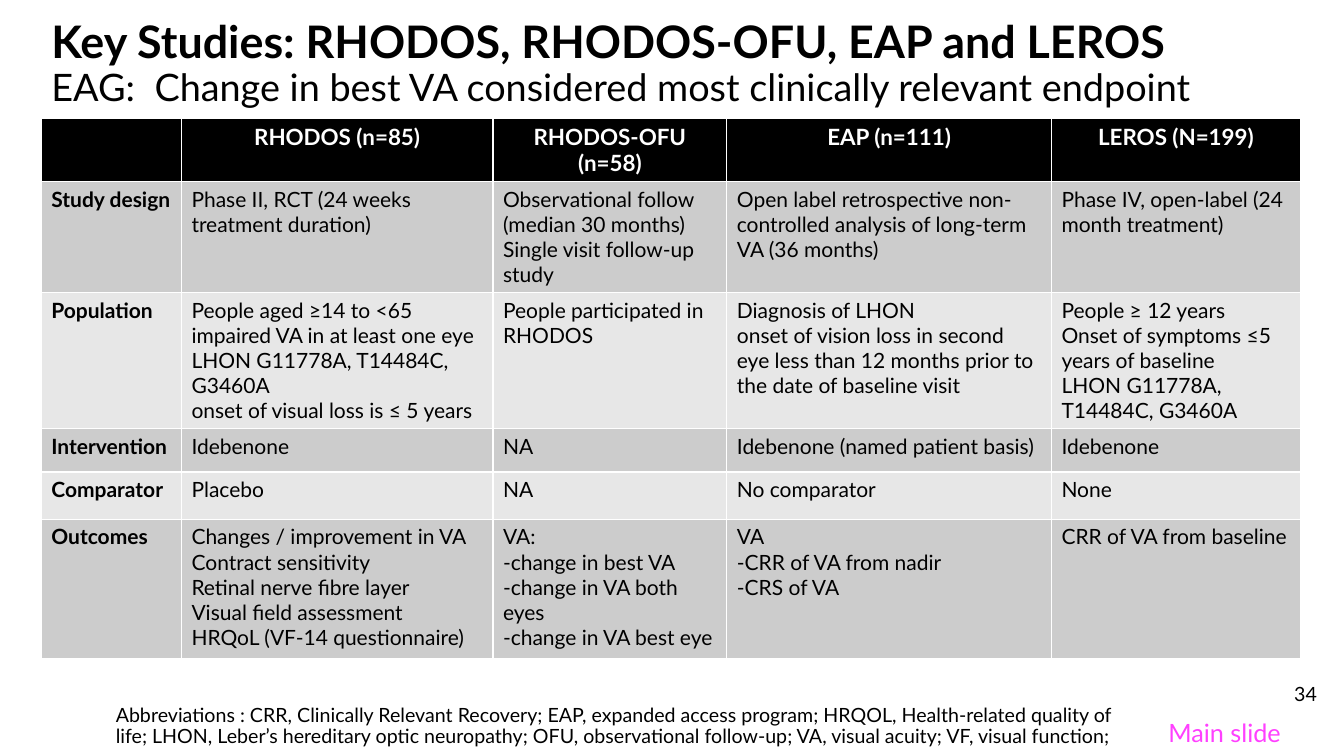
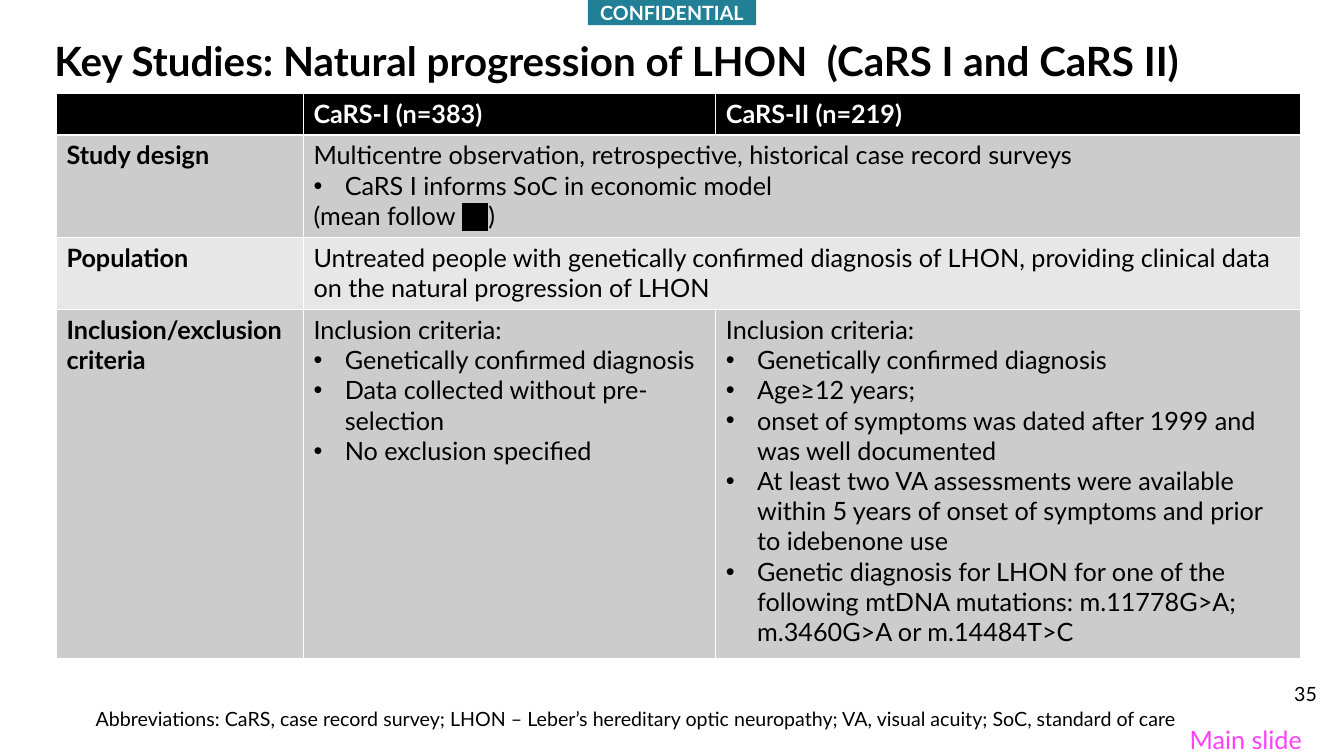
from lxml import etree
from pptx import Presentation
from pptx.dml.color import RGBColor
from pptx.enum.shapes import MSO_SHAPE
from pptx.enum.text import MSO_ANCHOR, MSO_AUTO_SIZE, PP_ALIGN
from pptx.oxml.ns import qn
from pptx.util import Inches, Pt

BLACK = RGBColor(0x00, 0x00, 0x00)
WHITE = RGBColor(0xFF, 0xFF, 0xFF)
DARK_BAND = RGBColor(0xCC, 0xCC, 0xCC)
LIGHT_BAND = RGBColor(0xE7, 0xE7, 0xE7)
TEAL = RGBColor(0x22, 0x80, 0x96)
PINK = RGBColor(0xFF, 0x40, 0xFF)

FONT = "Lato"
TITLE_ONLY = 5
BULLET = "• "
REDACTED = "** "

# Each table row is a list of cells; None continues the cell to its left.
TRIALS = [
    ["", "RHODOS (n=85)", "RHODOS-OFU (n=58)", "EAP (n=111)", "LEROS (N=199)"],
    ["Study design",
     "Phase II, RCT (24 weeks treatment duration)",
     "Observational follow (median 30 months)\nSingle visit follow-up study",
     "Open label retrospective non-controlled analysis of long-term VA (36 months)",
     "Phase IV, open-label (24 month treatment)"],
    ["Population",
     "People aged ≥14 to <65\nimpaired VA in at least one eye\n"
     "LHON G11778A, T14484C, G3460A\nonset of visual loss is ≤ 5 years",
     "People participated in RHODOS",
     "Diagnosis of LHON\nonset of vision loss in second eye less than 12 months "
     "prior to the date of baseline visit",
     "People ≥ 12 years\nOnset of symptoms ≤5 years of baseline\n"
     "LHON G11778A, T14484C, G3460A"],
    ["Intervention", "Idebenone", "NA", "Idebenone (named patient basis)", "Idebenone"],
    ["Comparator", "Placebo", "NA", "No comparator", "None"],
    ["Outcomes",
     "Changes / improvement in VA\nContract sensitivity\nRetinal nerve fibre layer\n"
     "Visual field assessment\nHRQoL (VF-14 questionnaire)",
     "VA:\n-change in best VA\n-change in VA both eyes\n-change in VA best eye",
     "VA\n-CRR of VA from nadir\n-CRS of VA",
     "CRR of VA from baseline"],
]

SURVEYS = [
    ["", "CaRS-I (n=383)", "CaRS-II (n=219)"],
    ["Study design",
     "Multicentre observation, retrospective, historical case record surveys\n"
     "• CaRS I informs SoC in economic model\n(mean follow ** )",
     None],
    ["Population",
     "Untreated people with genetically confirmed diagnosis of LHON, providing "
     "clinical data on the natural progression of LHON",
     None],
    ["Inclusion/exclusion criteria",
     "Inclusion criteria:\n• Genetically confirmed diagnosis\n"
     "• Data collected without pre-selection\n• No exclusion specified",
     "Inclusion criteria:\n• Genetically confirmed diagnosis\n• Age≥12 years;\n"
     "• onset of symptoms was dated after 1999 and was well documented\n"
     "• At least two VA assessments were available within 5 years of onset of "
     "symptoms and prior to idebenone use\n"
     "• Genetic diagnosis for LHON for one of the following mtDNA mutations: "
     "m.11778G>A; m.3460G>A or m.14484T>C"],
]


def add_run(paragraph, text, size, color=BLACK, bold=False, font=FONT):
    run = paragraph.add_run()
    run.text = text
    run.font.name = font
    run.font.size = Pt(size)
    run.font.bold = bold
    run.font.color.rgb = color
    return run


def add_redacted_run(paragraph, size):
    """Add black text on a black highlight."""
    run = add_run(paragraph, REDACTED, size, font="Arial")
    run.font.underline = True
    highlight = etree.Element(qn("a:highlight"))
    etree.SubElement(highlight, qn("a:srgbClr"), val=str(BLACK))
    run.font._element.find(qn("a:solidFill")).addnext(highlight)


def make_bullet(paragraph):
    properties = paragraph._p.get_or_add_pPr()
    indent = Inches(0.31)
    properties.set("marL", str(indent))
    properties.set("indent", str(-indent))
    etree.SubElement(properties, qn("a:buFont"), typeface="Arial")
    etree.SubElement(properties, qn("a:buChar"), char=BULLET.strip())


def set_title(slide, box, lines):
    """Fill the title from (text, size, bold) lines."""
    title = slide.shapes.title
    title.left, title.top, title.width, title.height = map(Inches, box)
    frame = title.text_frame
    frame.word_wrap = True
    frame.auto_size = MSO_AUTO_SIZE.NONE
    frame.vertical_anchor = MSO_ANCHOR.TOP
    paragraph = frame.paragraphs[0]
    paragraph.alignment = PP_ALIGN.LEFT
    paragraph.line_spacing = 0.9
    for index, (text, size, bold) in enumerate(lines):
        if index:
            paragraph.add_line_break()
        add_run(paragraph, text, size, bold=bold)


def add_text(slide, box, text, size=14, color=BLACK, align=PP_ALIGN.LEFT, spacing=None):
    frame = slide.shapes.add_textbox(*map(Inches, box)).text_frame
    frame.word_wrap = True
    paragraph = frame.paragraphs[0]
    paragraph.alignment = align
    paragraph.line_spacing = spacing
    add_run(paragraph, text, size, color)


def fill_cell(cell, text, size, color, bold, align):
    frame = cell.text_frame
    for index, line in enumerate(text.split("\n")):
        paragraph = frame.add_paragraph() if index else frame.paragraphs[0]
        paragraph.alignment = align
        if line.startswith(BULLET):
            make_bullet(paragraph)
            line = line.removeprefix(BULLET)
        before, redacted, after = line.partition(REDACTED)
        add_run(paragraph, before, size, color, bold)
        if redacted:
            add_redacted_run(paragraph, size)
            add_run(paragraph, after, size, color, bold)


def add_study_table(slide, left, top, widths, heights, rows, header_size, body_size,
                    header_align=PP_ALIGN.LEFT):
    """Add a table with a black header, grey bands and bold row labels."""
    table = slide.shapes.add_table(
        len(rows), len(widths), Inches(left), Inches(top),
        Inches(sum(widths)), Inches(sum(heights))).table
    for column, width in zip(table.columns, widths):
        column.width = Inches(width)
    for row, height in zip(table.rows, heights):
        row.height = Inches(height)
    for r, texts in enumerate(rows):
        header = r == 0
        band = BLACK if header else DARK_BAND if r % 2 else LIGHT_BAND
        for c, text in enumerate(texts):
            cell = table.cell(r, c)
            cell.fill.solid()
            cell.fill.fore_color.rgb = band
            if text is None:
                table.cell(r, c - 1).merge(cell)
            elif text:
                fill_cell(cell, text,
                          size=header_size if header else body_size,
                          color=WHITE if header else BLACK,
                          bold=header or c == 0,
                          align=header_align if header else PP_ALIGN.LEFT)


def add_confidential_tag(slide):
    tag = slide.shapes.add_shape(
        MSO_SHAPE.RECTANGLE, Inches(5.83), 0, Inches(1.67), Inches(0.25))
    tag.shadow.inherit = False
    tag.fill.solid()
    tag.fill.fore_color.rgb = TEAL
    tag.line.fill.background()
    frame = tag.text_frame
    frame.vertical_anchor = MSO_ANCHOR.MIDDLE
    paragraph = frame.paragraphs[0]
    paragraph.alignment = PP_ALIGN.CENTER
    add_run(paragraph, "CONFIDENTIAL", 14, WHITE, bold=True)


def add_footer(slide, number, abbreviations, abbreviations_box, label_left, label_top):
    add_text(slide, (12.65, 6.72, 0.51, 0.4), number, align=PP_ALIGN.RIGHT)
    add_text(slide, abbreviations_box, abbreviations, spacing=0.9)
    add_text(slide, (label_left, label_top, 1.4, 0.4), "Main slide", 18, PINK)


def add_trials_slide(presentation):
    slide = presentation.slides.add_slide(presentation.slide_layouts[TITLE_ONLY])
    set_title(slide, (0.41, 0.15, 12.3, 1.02), [
        ("Key Studies: RHODOS, RHODOS-OFU, EAP and LEROS", 32, True),
        ("EAG:  Change in best VA considered most clinically relevant endpoint", 27, False),
    ])
    add_study_table(slide, 0.41, 1.17, [1.39, 3.09, 2.32, 3.22, 2.47],
                    [0.55, 0.9, 1.1, 0.43, 0.47, 1.38], TRIALS,
                    header_size=16, body_size=15, header_align=PP_ALIGN.CENTER)
    add_footer(slide, "34",
               "Abbreviations : CRR, Clinically Relevant Recovery; EAP, expanded access "
               "program; HRQOL, Health-related quality of life; LHON, Leber’s hereditary "
               "optic neuropathy; OFU, observational follow-up; VA, visual acuity; "
               "VF, visual function;",
               (1.05, 6.95, 10.4, 0.55), 11.49, 7.07)


def add_surveys_slide(presentation):
    slide = presentation.slides.add_slide(presentation.slide_layouts[TITLE_ONLY])
    set_title(slide, (0.44, 0.36, 12.3, 0.75), [
        ("Key Studies: Natural progression of LHON  (CaRS I and CaRS II)", 28.8, True),
    ])
    add_study_table(slide, 0.56, 0.93, [2.45, 4.09, 5.8], [0.41, 1.02, 0.71, 3.46],
                    SURVEYS, header_size=18, body_size=18)
    add_footer(slide, "35",
               "Abbreviations: CaRS, case record survey; LHON – Leber’s hereditary optic "
               "neuropathy; VA, visual acuity; SoC, standard of care",
               (0.85, 6.99, 11.55, 0.35), 11.7, 7.14)
    add_confidential_tag(slide)


def main():
    presentation = Presentation()
    presentation.slide_width = Inches(13.33)
    presentation.slide_height = Inches(7.5)
    add_trials_slide(presentation)
    add_surveys_slide(presentation)
    presentation.save("out.pptx")


if __name__ == "__main__":
    main()
